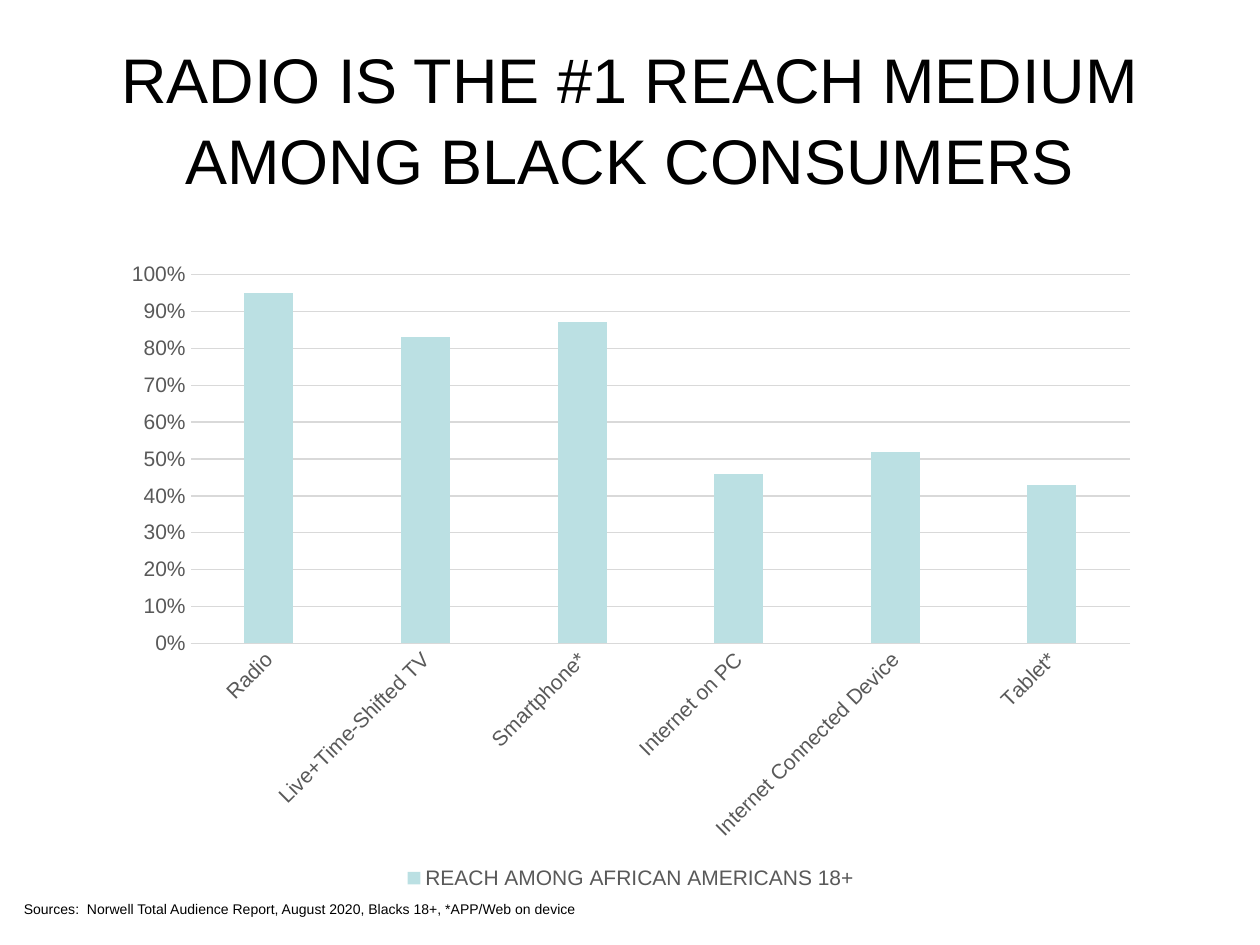
import pptx
import pptx.chart.data
import pptx.dml.color
import pptx.enum.chart
import pptx.enum.text
import pptx.util
from dataclasses import dataclass
from typing import Any

Cm = pptx.util.Cm
Pt = pptx.util.Pt
RGBColor = pptx.dml.color.RGBColor

BLACK = RGBColor(0x00, 0x00, 0x00)
GRAY = RGBColor(0x59, 0x59, 0x59)
RULE = RGBColor(0xD9, 0xD9, 0xD9)
TEAL = RGBColor(0xBB, 0xE0, 0xE3)
FACE = "Arial"


@dataclass(frozen=True)
class Box:
    left: float
    top: float
    width: float
    height: float

    def sides(self) -> tuple:
        return Cm(self.left), Cm(self.top), Cm(self.width), Cm(self.height)


@dataclass(frozen=True)
class Reach:
    medium: str
    share: float


REACHES = [
    Reach("Radio", 0.95),
    Reach("Live+Time-Shifted TV", 0.83),
    Reach("Smartphone*", 0.87),
    Reach("Internet on PC", 0.46),
    Reach("Internet Connected Device", 0.52),
    Reach("Tablet*", 0.43),
]


def set_font(font: Any, size: float, color: RGBColor) -> None:
    font.name = FACE
    font.size = Pt(size)
    font.bold = False
    font.color.rgb = color


def set_line(line: Any) -> None:
    line.color.rgb = RULE
    line.width = Pt(0.75)


def add_title(slide: Any, box: Box) -> None:
    title = slide.shapes.title
    title.left, title.top, title.width, title.height = box.sides()
    frame = title.text_frame
    frame.word_wrap = True
    frame.vertical_anchor = pptx.enum.text.MSO_ANCHOR.MIDDLE
    frame.text = "RADIO IS THE #1 REACH MEDIUM AMONG BLACK CONSUMERS"
    para = frame.paragraphs[0]
    para.alignment = pptx.enum.text.PP_ALIGN.CENTER
    para.line_spacing = 1.06
    set_font(para.font, 36, BLACK)


def add_source(slide: Any, box: Box) -> None:
    frame = slide.shapes.add_textbox(*box.sides()).text_frame
    frame.word_wrap = True
    frame.text = (
        "Sources: \u00a0Norwell Total Audience Report, August 2020, "
        "Blacks 18+, *APP/Web on device"
    ).replace("\u00a0", chr(160))
    set_font(frame.paragraphs[0].font, 8, BLACK)


def style_axis(axis: Any) -> None:
    axis.major_tick_mark = pptx.enum.chart.XL_TICK_MARK.NONE
    axis.minor_tick_mark = pptx.enum.chart.XL_TICK_MARK.NONE
    set_font(axis.tick_labels.font, 12, GRAY)


def add_chart(slide: Any, box: Box) -> None:
    data = pptx.chart.data.CategoryChartData(number_format="0%")
    data.categories = [reach.medium for reach in REACHES]
    data.add_series(
        "REACH AMONG AFRICAN AMERICANS 18+", [reach.share for reach in REACHES]
    )
    kind = pptx.enum.chart.XL_CHART_TYPE.COLUMN_CLUSTERED
    chart = slide.shapes.add_chart(kind, *box.sides(), data).chart
    set_font(chart.font, 10, BLACK)
    chart.has_title = False

    plot = chart.plots[0]
    plot.gap_width = 219
    plot.overlap = -27
    plot.vary_by_categories = False
    fill = plot.series[0].format.fill
    fill.solid()
    fill.fore_color.rgb = TEAL

    media = chart.category_axis
    style_axis(media)
    set_line(media.format.line)
    media.tick_labels.font._element.getparent().getparent().getparent().bodyPr.set(
        "rot", "-2700000"
    )

    share = chart.value_axis
    style_axis(share)
    share.minimum_scale = 0
    share.maximum_scale = 1
    share.major_unit = 0.1
    share.tick_labels.number_format = "0%"
    share.tick_labels.number_format_is_linked = False
    share.format.line.fill.background()
    share.has_major_gridlines = True
    set_line(share.major_gridlines.format.line)

    chart.has_legend = True
    legend = chart.legend
    legend.position = pptx.enum.chart.XL_LEGEND_POSITION.BOTTOM
    legend.include_in_layout = False
    set_font(legend.font, 12, GRAY)


def main() -> None:
    deck = pptx.Presentation()
    deck.slide_width = Cm(25.4)
    deck.slide_height = Cm(19.05)
    slide = deck.slides.add_slide(deck.slide_layouts[5])
    add_title(slide, Box(1.27, 0.76, 22.86, 3.18))
    add_source(slide, Box(0.23, 18.03, 13.51, 0.61))
    add_chart(slide, Box(2.24, 5.05, 20.96, 12.98))
    deck.save("out.pptx")


if __name__ == "__main__":
    main()
